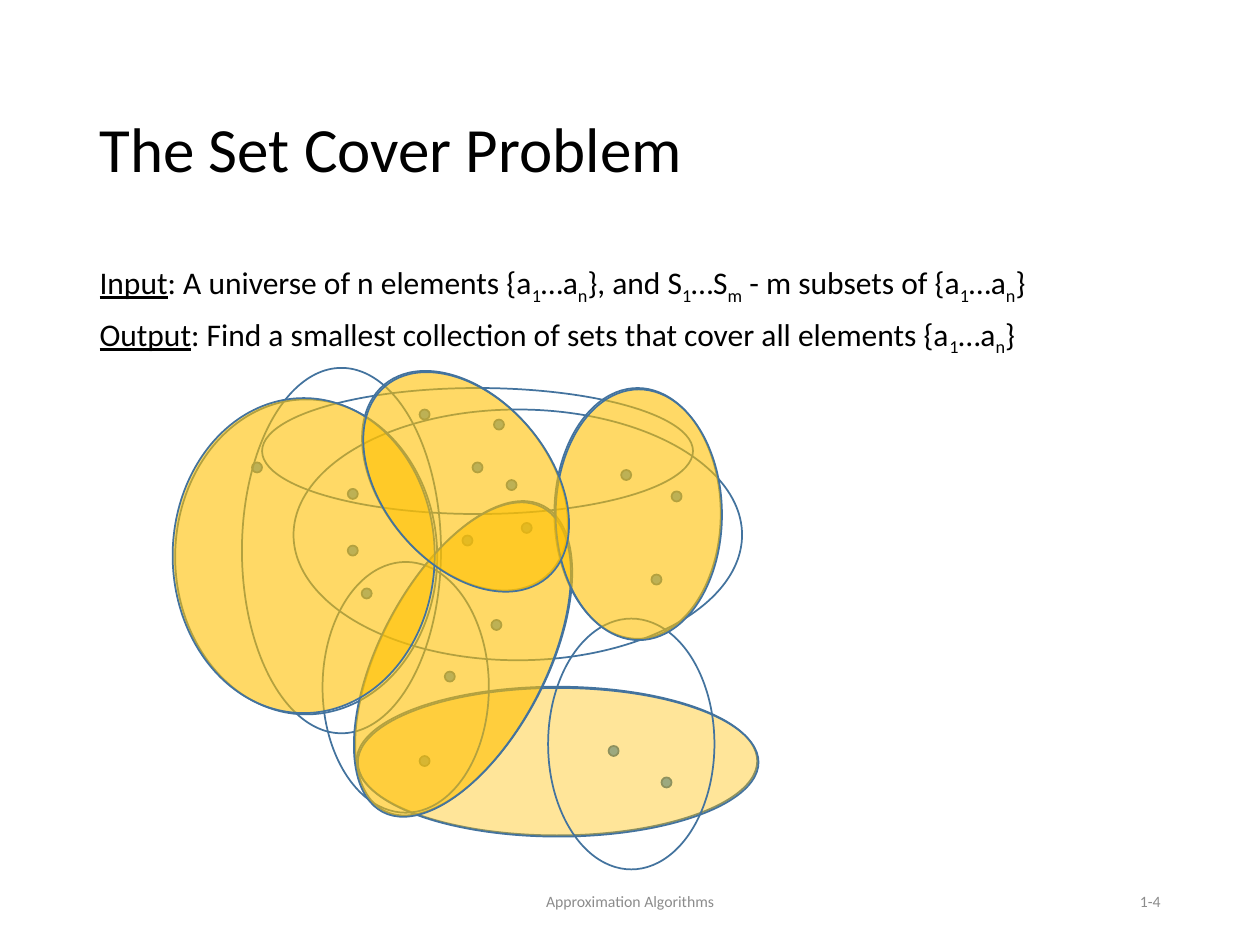
from lxml.etree import SubElement
from pptx import Presentation
from pptx.dml.color import RGBColor
from pptx.enum.shapes import MSO_SHAPE
from pptx.enum.text import MSO_ANCHOR, MSO_AUTO_SIZE, PP_ALIGN
from pptx.oxml.ns import qn
from pptx.util import Inches, Pt

COLORS = {"text": "000000", "footer": "8C8C8C", "dot": "5B9BD5",
          "outline": "43739E", "cover": "FFC000"}
FONT = "Calibri"
WIDTH, HEIGHT = 10, 7.5
MARGIN = 0.69
CONTENT = WIDTH - 2 * MARGIN
FOOTER_TOP, FOOTER_HEIGHT = 6.95, 0.4
DOT = 0.08

TITLE = "The Set Cover Problem"
UNIVERSE = [("{a", ""), ("1", "sub"), ("…a", ""), ("n", "sub"), ("}", "")]
BODY = [
    [("Input", "under"), (": A universe of n elements ", ""), *UNIVERSE,
     (", and S", ""), ("1", "sub"), ("…S", ""), ("m", "sub"),
     (" - m subsets of ", ""), *UNIVERSE],
    [("Output", "under"),
     (": Find a smallest collection of sets that cover all elements ", ""),
     *UNIVERSE],
]
FOOTERS = [
    ("Approximation Algorithms", 3.31, 3.38, PP_ALIGN.CENTER),
    ("1-4", 7.06, 2.25, PP_ALIGN.RIGHT),
]
ELEMENTS = [
    (2.87, 4.67), (2.76, 3.88), (3.67, 4.25), (2.76, 4.33), (4.14, 4.15),
    (5.17, 4.56), (4.93, 3.73), (4.02, 3.81), (5.33, 3.9), (3.75, 3.67),
    (3.33, 3.25), (4.83, 5.92), (3.53, 5.33), (5.25, 6.17), (3.92, 3.33),
    (3.33, 6), (3.9, 4.92), (2, 3.67),
]
SIZES = {"round": (2.08, 2.5), "flat": (3.18, 1.18), "tall": (1.58, 2.9),
         "thin": (3.42, 1), "oval": (1.32, 1.99), "long": (1.32, 2.73),
         "wide": (3.56, 1.99)}
SUBSETS = [
    ("round", 1.39, 3.17, 0, 0),
    ("flat", 2.83, 5.45, 0, 0),
    ("tall", 1.92, 2.92, 0, 0),
    ("flat", 2.84, 5.46, 0, 40),
    ("thin", 2.08, 3.08, 0, 0),
    ("oval", 4.4, 3.08, 0, 0),
    ("oval", 4.35, 4.91, 0, 0),
    ("oval", 3.03, 2.82, 319.8, 0),
    ("oval", 2.56, 4.46, 0, 0),
    ("long", 3.02, 3.86, 27.6, 0),
    ("wide", 2.33, 3.25, 0, 0),
    ("long", 3.01, 3.87, 27.6, 60),
    ("oval", 4.41, 3.09, 0, 60),
    ("round", 1.37, 3.16, 0, 60),
    ("oval", 3.04, 2.83, 319.8, 60),
]


def rgb(name):
    return RGBColor.from_string(COLORS[name])


def place(sp, left, top, width, height):
    sp.left, sp.top = Inches(left), Inches(top)
    sp.width, sp.height = Inches(width), Inches(height)


def write(sp, paragraphs, size, color="text", align=PP_ALIGN.LEFT,
          anchor=MSO_ANCHOR.MIDDLE, spacing=1.0, before=0):
    tf = sp.text_frame
    tf.word_wrap = True
    tf.auto_size = MSO_AUTO_SIZE.NONE
    tf.vertical_anchor = anchor
    for i, runs in enumerate(paragraphs):
        p = tf.add_paragraph() if i else tf.paragraphs[0]
        p.alignment, p.line_spacing, p.space_before = align, spacing, Pt(before)
        pPr = p._p.get_or_add_pPr()
        pPr.set("marL", "0")
        pPr.set("indent", "0")
        SubElement(pPr, qn("a:buNone"))
        for text, style in runs:
            r = p.add_run()
            r.text = text
            r.font.name, r.font.size = FONT, Pt(size)
            r.font.color.rgb = rgb(color)
            if style == "under":
                r.font.underline = True
            elif style == "sub":
                r.font._element.set("baseline", "-25000")


def add_ellipse(s, left, top, width, height, fill=None, opacity=100, rotation=0):
    sp = s.shapes.add_shape(MSO_SHAPE.OVAL, Inches(left), Inches(top),
                            Inches(width), Inches(height))
    sp.shadow.inherit = False
    sp.rotation = rotation
    sp.line.color.rgb = rgb("outline")
    sp.line.width = Pt(1)
    if fill is None:
        sp.fill.background()
        return
    sp.fill.solid()
    sp.fill.fore_color.rgb = rgb(fill)
    if opacity < 100:
        color = sp._element.spPr.find(qn("a:solidFill"))[0]
        SubElement(color, qn("a:alpha"), val=str(opacity * 1000))


def main():
    prs = Presentation()
    prs.slide_width, prs.slide_height = Inches(WIDTH), Inches(HEIGHT)
    s = prs.slides.add_slide(prs.slide_layouts[1])

    title, body = s.placeholders
    place(title, MARGIN, 0.4, CONTENT, 1.45)
    write(title, [[(TITLE, "")]], 36, spacing=1.15, before=6)
    place(body, MARGIN, 2.04, CONTENT, 4.76)
    write(body, BODY, 18, anchor=MSO_ANCHOR.TOP, spacing=0.9, before=7.5)

    for text, left, width, align in FOOTERS:
        box = s.shapes.add_textbox(Inches(left), Inches(FOOTER_TOP),
                                   Inches(width), Inches(FOOTER_HEIGHT))
        write(box, [[(text, "")]], 9, color="footer", align=align)

    for left, top in ELEMENTS:
        add_ellipse(s, left, top, DOT, DOT, fill="dot")
    for size, left, top, rotation, opacity in SUBSETS:
        add_ellipse(s, left, top, *SIZES[size], fill="cover" if opacity else None,
                    opacity=opacity, rotation=rotation)

    prs.save("out.pptx")


if __name__ == "__main__":
    main()
